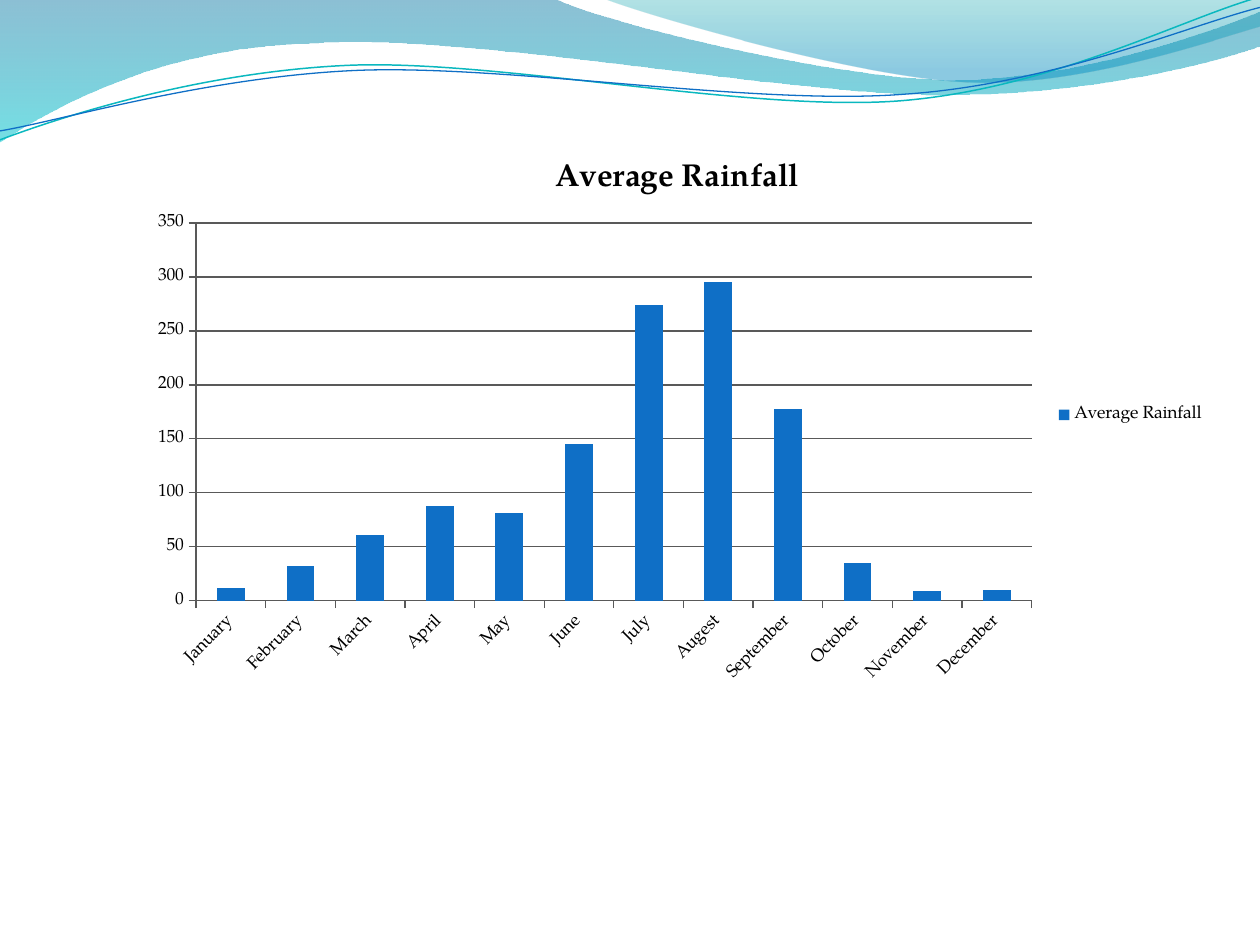
import pptx
import pptx.chart.data
import pptx.dml.color
import pptx.enum.chart
import pptx.oxml
import pptx.oxml.ns
import pptx.util

Cm = pptx.util.Cm
Pt = pptx.util.Pt

FONT = "TeX Gyre Pagella"
COLORS = {
    "bar": "0F6FC6", "text": "000000", "axis": "595959",
    "teal line": "0AB8BF", "blue line": "0F6FC6",
    "wave top": "0074A1", "wave bottom": "00C6CF",
    "crest top": "00A1A9", "crest bottom": "008BBF",
}

# Outlines in cm: a pair is a straight step, three pairs are a Bezier step
WAVE = [
    [(0, 0)], [(11.18, -0.03)],
    [(12.09, 0.43), (16.87, 1.6), (19.25, 1.6)],
    [(21.67, 1.6), (24.33, 0.66), (25.4, 0.23)], [(25.43, 0.91)],
    [(24.97, 1.12), (22.1, 1.93), (18.95, 1.91)],
    [(15.8, 1.91), (9.7, 0.71), (6.53, 0.86)],
    [(3.28, 0.91), (1.17, 2.11), (-0.03, 2.87)], [(0, 0)],
]
CREST = [
    [(12.17, -0.03)],
    [(12.93, 0.28), (17.32, 1.57), (19.53, 1.65)],
    [(21.74, 1.75), (24.41, 0.81), (25.4, 0.53)],
    [(25.4, 0)], [(12.17, -0.03)],
]
# The two lines are given level and then tilted
TILT = 357.3
TEAL_LINE = [
    [(-0.05, 2.22)],
    [(1.19, 1.82), (4.01, 1.04), (7.05, 1.05)],
    [(10.05, 1.07), (15.02, 2.37), (18.08, 2.29)],
    [(21.13, 2.2), (23.86, 0.91), (25.41, 0.55)],
]
BLUE_LINE = [
    [(-0.04, 2.04)],
    [(1.16, 1.9), (4.17, 1.15), (7.2, 1.16)],
    [(10.25, 1.18), (15.13, 2.25), (18.19, 2.16)],
    [(21.21, 2.1), (23.93, 1.06), (25.45, 0.75)],
]

RAINFALL = {
    "January": 12, "February": 32, "March": 61, "April": 88,
    "May": 81, "June": 145, "July": 274, "Augest": 295,
    "September": 178, "October": 35, "November": 9, "December": 10,
}


def color(name):
    return pptx.dml.color.RGBColor.from_string(COLORS[name])


def set_values(target, values):
    for name, value in values.items():
        setattr(target, name, value)


def set_font(font, size, bold=False):
    set_values(font, {"name": FONT, "size": Pt(size), "bold": bold})
    font.color.rgb = color("text")


def add_outline(page, steps, close):
    """Build a freeform, then join each three-point step into one Bezier."""
    points = [(Cm(x), Cm(y)) for step in steps for x, y in step]
    builder = page.shapes.build_freeform(*points[0])
    builder.add_line_segments(points[1:], close=close)
    shape = builder.convert_to_shape()
    shape.shadow.inherit = False

    segments = iter(list(shape.element.iter(pptx.oxml.ns.qn("a:lnTo"))))
    for step in steps[1:]:
        group = [next(segments) for _ in step]
        if len(group) == 3:
            curve = pptx.oxml.parse_xml(
                f'<a:cubicBezTo {pptx.oxml.ns.nsdecls("a")}/>')
            group[0].addprevious(curve)
            for segment in group:
                curve.append(segment[0])
                segment.getparent().remove(segment)
    return shape


def add_wave(page, steps, stops):
    """Draw a closed wave with a see-through gradient from top to bottom."""
    shape = add_outline(page, steps, True)
    shape.line.fill.background()
    shape.fill.gradient()
    shape.fill.gradient_angle = 270
    for stop, (position, name, _) in zip(shape.fill.gradient_stops, stops):
        stop.position = position
        stop.color.rgb = color(name)
    tints = shape.element.spPr.iter(pptx.oxml.ns.qn("a:srgbClr"))
    for tint, (_, _, opacity) in zip(tints, stops):
        tint.append(pptx.oxml.parse_xml(
            f'<a:alpha {pptx.oxml.ns.nsdecls("a")} val="{opacity * 1000}"/>'))


def add_curve(page, steps, name, width):
    shape = add_outline(page, steps, False)
    shape.rotation = TILT
    shape.fill.background()
    shape.line.color.rgb = color(name)
    shape.line.width = Pt(width)


def format_axis(axis, gridlines):
    set_values(axis, {
        "has_major_gridlines": gridlines,
        "major_tick_mark": pptx.enum.chart.XL_TICK_MARK.OUTSIDE,
        "minor_tick_mark": pptx.enum.chart.XL_TICK_MARK.NONE,
    })
    lines = [axis.format.line]
    if gridlines:
        lines.append(axis.major_gridlines.format.line)
    for line in lines:
        line.color.rgb = color("axis")
        line.width = Pt(0.75)
    set_font(axis.tick_labels.font, 10)


def add_rainfall_chart(page):
    data = pptx.chart.data.CategoryChartData()
    data.categories = list(RAINFALL)
    data.add_series("Average Rainfall", list(RAINFALL.values()))
    chart = page.shapes.add_chart(
        pptx.enum.chart.XL_CHART_TYPE.COLUMN_CLUSTERED,
        Cm(2.75), Cm(2.75), Cm(21.8), Cm(11.23), data).chart
    set_font(chart.font, 10)

    # Title and legend
    set_values(chart, {"has_title": True, "has_legend": True})
    title = chart.chart_title.text_frame
    title.text = "Average Rainfall"
    set_font(title.paragraphs[0].runs[0].font, 18, True)
    set_values(chart.legend, {
        "position": pptx.enum.chart.XL_LEGEND_POSITION.RIGHT,
        "include_in_layout": False,
    })
    set_font(chart.legend.font, 10)

    # Axes and columns
    format_axis(chart.category_axis, False)
    format_axis(chart.value_axis, True)
    plot = chart.plots[0]
    set_values(plot, {"gap_width": 150, "vary_by_categories": False})
    fill = plot.series[0].format.fill
    fill.solid()
    fill.fore_color.rgb = color("bar")


def main():
    deck = pptx.Presentation()
    set_values(deck, {"slide_width": Cm(25.4), "slide_height": Cm(19.05)})
    page = deck.slides.add_slide(deck.slide_layouts[6])

    # Waves along the top
    add_wave(page, WAVE, [(0, "wave top", 45), (1, "wave bottom", 55)])
    add_wave(page, CREST, [(0, "crest top", 30), (0.8, "crest bottom", 45)])
    add_curve(page, TEAL_LINE, "teal line", 0.85)
    add_curve(page, BLUE_LINE, "blue line", 0.75)

    add_rainfall_chart(page)
    deck.save("out.pptx")


if __name__ == "__main__":
    main()
